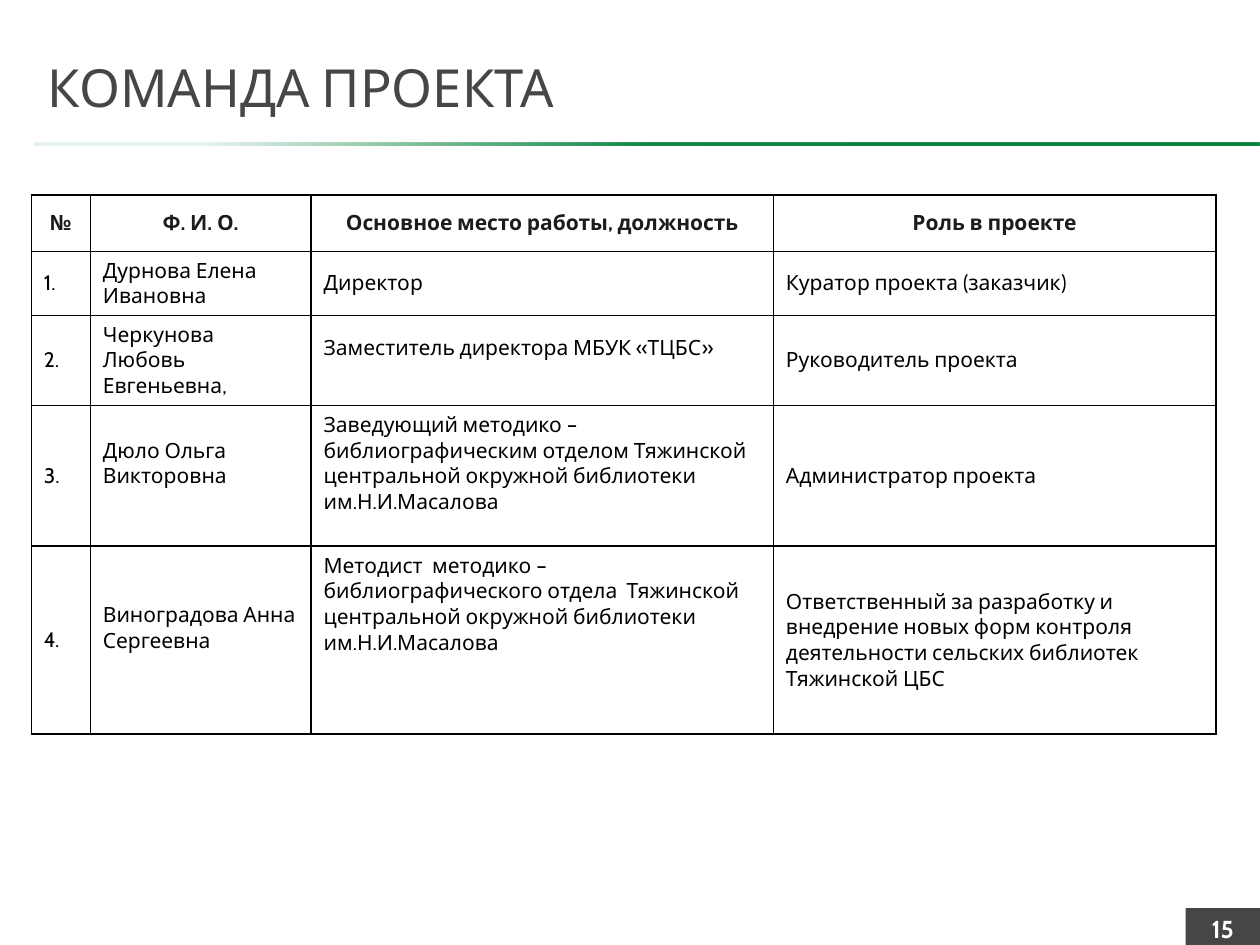
from dataclasses import dataclass

from lxml.etree import SubElement
from pptx import Presentation
from pptx.dml.color import RGBColor
from pptx.enum.shapes import MSO_SHAPE
from pptx.enum.text import MSO_ANCHOR, MSO_AUTO_SIZE, PP_ALIGN
from pptx.oxml.ns import qn
from pptx.util import Cm, Pt


@dataclass(frozen=True)
class Theme:
    font: str = "Cabin"
    dark: str = "464646"
    heading: str = "1C1C1C"
    ink: str = "000000"
    paper: str = "FFFFFF"
    accent: str = "00813B"
    title_size: int = 30
    table_size: int = 12
    number_size: int = 14
    border: int = 1


HEADINGS = ["№", "Ф. И. О.", "Основное место работы, должность", "Роль в проекте"]
MEMBERS = [
    ["1.", "Дурнова Елена Ивановна", "Директор", "Куратор проекта (заказчик)"],
    ["2.", "Черкунова Любовь Евгеньевна,", "Заместитель директора МБУК «ТЦБС»",
     "Руководитель проекта"],
    ["3.", "Дюло Ольга Викторовна",
     "Заведующий методико – библиографическим отделом Тяжинской центральной "
     "окружной библиотеки им.Н.И.Масалова", "Администратор проекта"],
    ["4.", "Виноградова Анна Сергеевна",
     "Методист  методико – библиографического отдела  Тяжинской центральной "
     "окружной библиотеки им.Н.И.Масалова",
     "Ответственный за разработку и внедрение новых форм контроля деятельности "
     "сельских библиотек Тяжинской ЦБС"],
]
COLUMN_WIDTHS = [1.19, 4.45, 9.32, 8.92]
ROW_HEIGHTS = [1.14, 1.28, 1.8, 2.84, 3.79]
# Extra bottom margin that lifts the text, by (row, column)
LIFTS = {(2, 2): 0.5, (3, 1): 0.5, (3, 2): 0.5, (4, 1): 0.5, (4, 2): 1.45}


class SlideBuilder:
    def __init__(self, slide, theme):
        self.slide = slide
        self.theme = theme

    def set_text(self, frame, text, size, color, bold=False, align=PP_ALIGN.LEFT):
        frame.text = text
        frame.word_wrap = True
        paragraph = frame.paragraphs[0]
        paragraph.alignment = align
        font = paragraph.runs[0].font
        for name, value in {"name": self.theme.font, "size": Pt(size), "bold": bold}.items():
            setattr(font, name, value)
        font.color.rgb = RGBColor.from_string(color)

    def title(self, text, left, top, width, height):
        heading = self.slide.shapes.title
        place = {"left": left, "top": top, "width": width, "height": height}
        for name, value in place.items():
            setattr(heading, name, Cm(value))
        frame = heading.text_frame
        self.set_text(frame, text, self.theme.title_size, self.theme.dark)
        frame.auto_size = MSO_AUTO_SIZE.NONE
        frame.vertical_anchor = MSO_ANCHOR.MIDDLE

    def bar(self, left, top, width, height):
        shape = self.slide.shapes.add_shape(
            MSO_SHAPE.RECTANGLE, Cm(left), Cm(top), Cm(width), Cm(height))
        shape.shadow.inherit = False
        shape.line.fill.background()
        return shape

    def page_number(self, text, *box):
        badge = self.bar(*box)
        badge.fill.solid()
        badge.fill.fore_color.rgb = RGBColor.from_string(self.theme.dark)
        self.set_text(badge.text_frame, text, self.theme.number_size,
                      self.theme.paper, True, PP_ALIGN.CENTER)
        badge.text_frame.vertical_anchor = MSO_ANCHOR.MIDDLE

    def fading_rule(self, *box):
        """Draw a rule that fades from solid at the right to pale at the left."""
        rule = self.bar(*box)
        rule.fill.gradient()
        rule.fill.gradient_angle = 180
        stops = rule._element.spPr.find(qn("a:gradFill")).find(qn("a:gsLst"))
        for stop in list(stops):
            stops.remove(stop)
        for position, opacity in [(2, 100), (50, 95), (86, 10)]:
            stop = SubElement(stops, qn("a:gs"), pos=str(position * 1000))
            color = SubElement(stop, qn("a:srgbClr"), val=self.theme.accent)
            SubElement(color, qn("a:alpha"), val=str(opacity * 1000))

    def outline(self, cell):
        properties = cell._tc.get_or_add_tcPr()
        for side in ("lnL", "lnR", "lnT", "lnB"):
            line = SubElement(properties, qn(f"a:{side}"), w=str(int(Pt(self.theme.border))))
            fill = SubElement(line, qn("a:solidFill"))
            SubElement(fill, qn("a:srgbClr"), val=self.theme.ink)

    def table(self, rows, left, top):
        table = self.slide.shapes.add_table(
            len(rows), len(COLUMN_WIDTHS), Cm(left), Cm(top),
            Cm(sum(COLUMN_WIDTHS)), Cm(sum(ROW_HEIGHTS))).table
        table.first_row = table.horz_banding = False
        for column, width in zip(table.columns, COLUMN_WIDTHS):
            column.width = Cm(width)
        for row, height in zip(table.rows, ROW_HEIGHTS):
            row.height = Cm(height)
        for r, texts in enumerate(rows):
            for c, text in enumerate(texts):
                cell = table.cell(r, c)
                is_heading = r == 0
                self.set_text(cell.text_frame, text, self.theme.table_size,
                              self.theme.heading if is_heading else self.theme.ink,
                              is_heading, PP_ALIGN.CENTER if is_heading else PP_ALIGN.LEFT)
                cell.vertical_anchor = MSO_ANCHOR.MIDDLE
                cell.margin_bottom = Cm(0.13 + LIFTS.get((r, c), 0))
                self.outline(cell)
                cell.fill.background()


def main():
    presentation = Presentation()
    presentation.slide_width, presentation.slide_height = Cm(25.4), Cm(19.05)
    slide = presentation.slides.add_slide(presentation.slide_layouts[5])
    builder = SlideBuilder(slide, Theme())
    builder.title("КОМАНДА ПРОЕКТА", 0.71, 0.58, 24.13, 2.34)
    builder.table([HEADINGS, *MEMBERS], 0.63, 3.93)
    builder.page_number("15", 23.9, 18.31, 1.5, 0.81)
    builder.fading_rule(0.7, 2.87, 24.7, 0.06)
    presentation.save("out.pptx")


if __name__ == "__main__":
    main()
